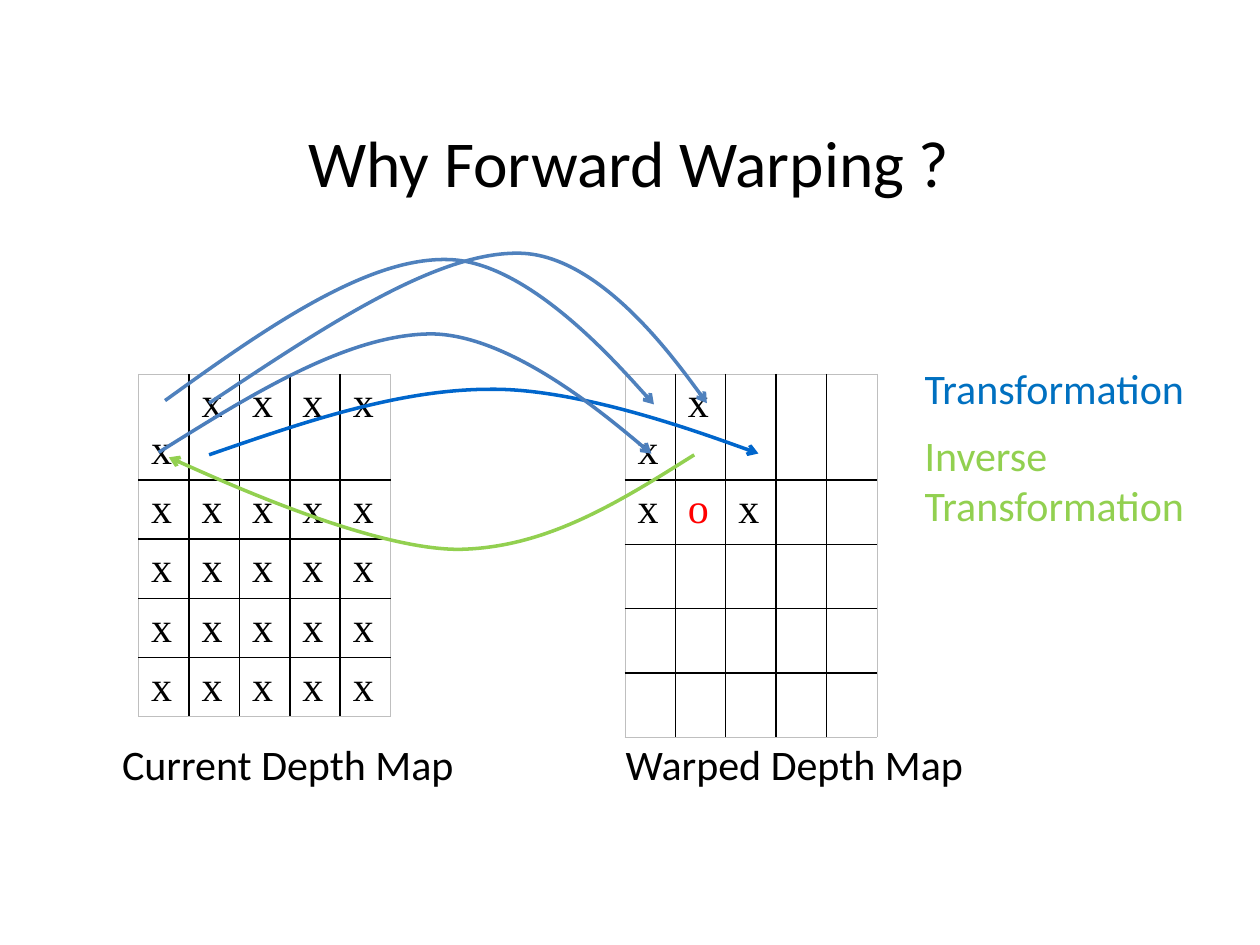
"""Build a slide on forward warping between two depth maps."""
from lxml import etree
from pptx import Presentation
from pptx.dml.color import RGBColor
from pptx.enum.text import MSO_ANCHOR, PP_ALIGN
from pptx.oxml.ns import qn
from pptx.util import Inches, Pt

LEFT, CENTER = PP_ALIGN.LEFT, PP_ALIGN.CENTER
MIDDLE = MSO_ANCHOR.MIDDLE
BLACK, GREY, RED = "000000", "BFBFBF", "FF0000"
BLUE, GREEN, STEEL = "0070C0", "92D050", "4F81BD"


def color(code):
    return RGBColor.from_string(code)


def style(para, size, name, code, align=LEFT):
    para.alignment = align
    para.font.size = Pt(size)
    para.font.name = name
    para.font.color.rgb = color(code)


prs = Presentation()
prs.slide_width, prs.slide_height = Inches(10), Inches(7.5)
slide = prs.slides.add_slide(prs.slide_layouts[5])
shapes = slide.shapes

title = shapes.title
title.left, title.top = Inches(0.62), Inches(1.02)
title.width, title.height = Inches(8.75), Inches(0.63)
title.text_frame.text = "Why Forward Warping ?"
title.text_frame.vertical_anchor = MIDDLE
para = title.text_frame.paragraphs[0]
style(para, 37.4, "Calibri", BLACK, CENTER)
para.line_spacing = 0.8

SIZE = 5
maps = [
    (1.1, 0.47, [" xxxxx"] + ["xxxxx"] * 4),
    (4.96, 0.51, [" xx", "xox", "", "", ""]),
]
for x, high, rows in maps:
    frame = shapes.add_table(SIZE, SIZE, Inches(x), Inches(2.97),
                             Inches(2), Inches(0.84 + 4 * high))
    table = frame.table
    table.first_row = table.horz_banding = False
    for col in table.columns:
        col.width = Inches(0.4)
    for r, marks in enumerate(rows):
        table.rows[r].height = Inches(high if r else 0.84)
        words = list(marks.strip())
        if marks.startswith(" "):
            words[0] = " " + words[0]
        for c in range(SIZE):
            cell = table.cell(r, c)
            para = cell.text_frame.paragraphs[0]
            if c < len(words):
                para.text = words[c]
                code = RED if words[c] == "o" else BLACK
                style(para, 24, "Times New Roman", code)
            else:
                style(para, 24, "Calibri", BLACK)
            props = cell._tc.get_or_add_tcPr()
            outer = {"lnL": c == 0, "lnR": c == SIZE - 1,
                     "lnT": r == 0, "lnB": r == SIZE - 1}
            for side, edge in outer.items():
                line = etree.SubElement(props, qn("a:" + side),
                                        w=str(Pt(0.5 if edge else 1)))
                fill = etree.SubElement(line, qn("a:solidFill"))
                etree.SubElement(fill, qn("a:srgbClr"),
                                 val=GREY if edge else BLACK)
            cell.fill.background()

curves = [
    (STEEL, [(1.31, 3.18), (2.1, 2.61), (2.9, 2.05), (3.54, 2.06),
             (4.19, 2.06), (5.19, 3.21), (5.19, 3.21)]),
    (STEEL, [(1.66, 3.2), (2.55, 2.61), (3.44, 2.01), (4.1, 2.01),
             (4.76, 2), (5.59, 3.17), (5.61, 3.2)]),
    ("0066CC", [(1.66, 3.61), (2.41, 3.35), (3.17, 3.09), (3.89, 3.09),
                (4.62, 3.08), (6.02, 3.6), (6.02, 3.6)]),
    (GREEN, [(5.51, 3.61), (4.92, 3.98), (4.34, 4.35), (3.64, 4.36),
             (2.94, 4.36), (1.34, 3.63), (1.34, 3.63)]),
    ("4B7EBC", [(1.26, 3.59), (2.01, 3.12), (2.77, 2.65), (3.43, 2.65),
                (4.08, 2.66), (5.17, 3.6), (5.17, 3.6)]),
]
for code, spots in curves:
    spots = [(Inches(x), Inches(y)) for x, y in spots]
    build = shapes.build_freeform(*spots[0])
    build.add_line_segments(spots[1:], close=False)
    curve = build.convert_to_shape()
    curve.shadow.inherit = False
    curve.fill.background()
    curve.line.color.rgb = color(code)
    curve.line.width = Pt(2)
    etree.SubElement(curve.line._get_or_add_ln(), qn("a:tailEnd"), type="arrow")
    track = next(curve._element.iter(qn("a:path")))
    steps = track.findall(qn("a:lnTo"))
    for start in range(0, len(steps), 3):
        bend = etree.SubElement(track, qn("a:cubicBezTo"))
        for step in steps[start:start + 3]:
            bend.append(step[0])
            track.remove(step)

labels = [
    (0.62, 5.81, 3.33, 0.55, "Current Depth Map", BLACK, CENTER),
    (4.64, 5.81, 3.33, 0.55, "Warped Depth Map", BLACK, CENTER),
    (7.24, 2.83, 2.83, 0.5, "Transformation", BLUE, LEFT),
    (7.24, 3.36, 2.83, 1.61, "Inverse\nTransformation", GREEN, LEFT),
]
for x, y, wide, high, text, code, align in labels:
    box = shapes.add_textbox(Inches(x), Inches(y), Inches(wide), Inches(high))
    box.text_frame.word_wrap = False
    box.text_frame.text = text
    for para in box.text_frame.paragraphs:
        style(para, 24, "Calibri", code, align)

prs.save("out.pptx")
